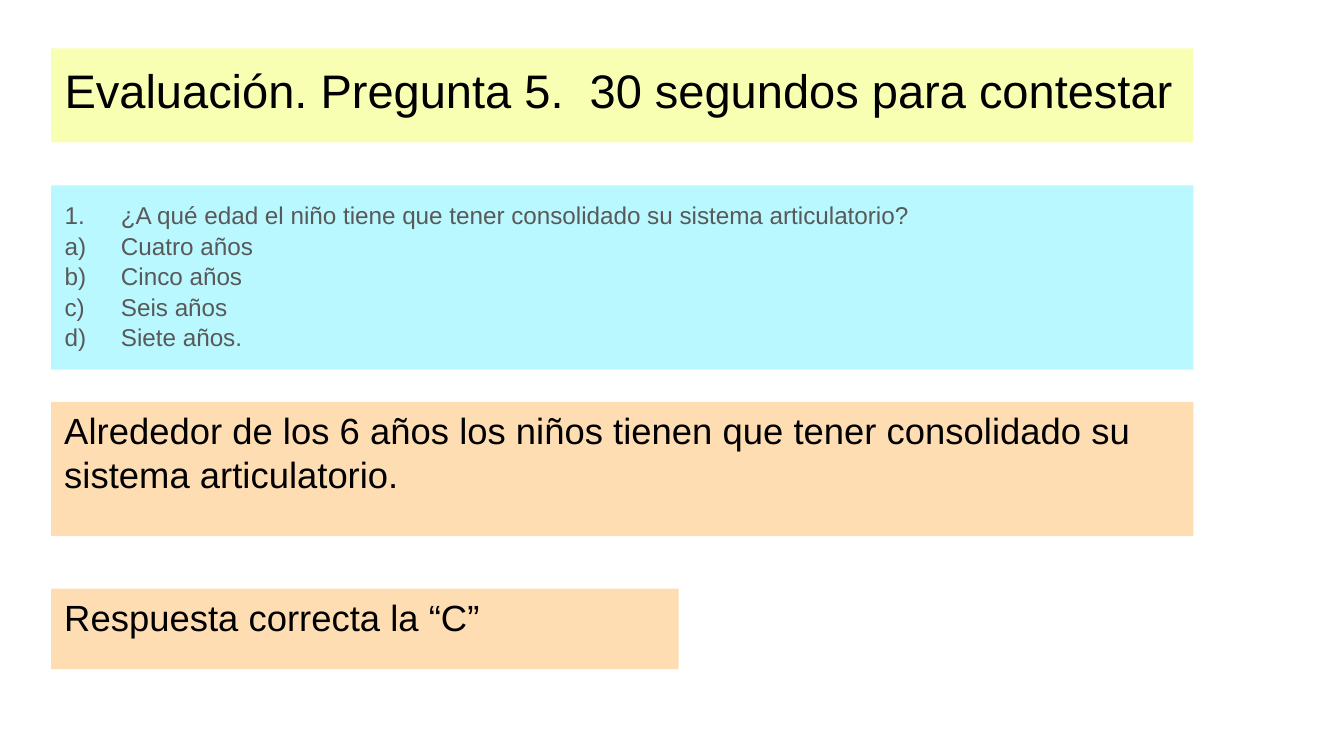
"""Build the quiz slide with its question, explanation and answer."""
import pptx
import pptx.util
import pptx.dml.color
import pptx.enum.text
import pptx.oxml.ns
import lxml.etree

TITLE = "Evaluación. Pregunta 5.  30 segundos para contestar"
QUESTION = "¿A qué edad el niño tiene que tener consolidado su sistema articulatorio?"
OPTIONS = ["Cuatro años", "Cinco años", "Seis años", "Siete años."]
EXPLANATION = "Alrededor de los 6 años los niños tienen que tener consolidado su sistema articulatorio."
ANSWER = "Respuesta correcta la “C”"

THEME = {
    "font": "Arial",
    "title": {"size": 25.2, "color": "000000", "fill": "F8FFB3", "spacing": 1.0},
    "question": {"size": 13, "color": "595959", "fill": "BAF8FF", "spacing": 1.05},
    "answer": {"size": 19.5, "color": "000000", "fill": "FFDDB3", "spacing": 1.0},
}
SLIDE_WIDTH = 10
LEFT, WIDTH, ANSWER_WIDTH = 0.38, 8.5, 4.67
INDENT = pptx.util.Inches(0.42)


def rgb(value):
    return pptx.dml.color.RGBColor.from_string(value)


def add_number(paragraph, scheme, color):
    properties = paragraph._p.get_or_add_pPr()
    properties.set("marL", str(INDENT))
    properties.set("indent", str(-INDENT))
    bullet_color = lxml.etree.SubElement(properties, pptx.oxml.ns.qn("a:buClr"))
    lxml.etree.SubElement(bullet_color, pptx.oxml.ns.qn("a:srgbClr"), val=color)
    lxml.etree.SubElement(properties, pptx.oxml.ns.qn("a:buAutoNum"), type=scheme)


def fill_panel(shape, box, style, lines, margin, schemes=()):
    shape.left, shape.top, shape.width, shape.height = map(pptx.util.Inches, box)
    shape.fill.solid()
    shape.fill.fore_color.rgb = rgb(style["fill"])
    frame = shape.text_frame
    frame.word_wrap = True
    frame.auto_size = pptx.enum.text.MSO_AUTO_SIZE.NONE
    frame.vertical_anchor = pptx.enum.text.MSO_ANCHOR.TOP
    frame.margin_left = frame.margin_right = pptx.util.Inches(0.1)
    frame.margin_top = frame.margin_bottom = pptx.util.Inches(margin)
    frame.text = "\n".join(lines)
    for paragraph in frame.paragraphs:
        paragraph.alignment = pptx.enum.text.PP_ALIGN.LEFT
        paragraph.line_spacing = style["spacing"]
        paragraph.space_before = pptx.util.Pt(0)
    for paragraph, scheme in zip(frame.paragraphs, schemes):
        add_number(paragraph, scheme, style["color"])
    for paragraph in frame.paragraphs:
        paragraph.font.name = THEME["font"]
        paragraph.font.size = pptx.util.Pt(style["size"])
        paragraph.font.color.rgb = rgb(style["color"])


def main():
    presentation = pptx.Presentation()
    presentation.slide_width = pptx.util.Inches(SLIDE_WIDTH)
    presentation.slide_height = pptx.util.Inches(SLIDE_WIDTH * 9 / 16)
    slide = presentation.slides.add_slide(presentation.slide_layouts[1])

    fill_panel(slide.shapes.title, (LEFT, 0.36, WIDTH, 0.7), THEME["title"], [TITLE], 0.1)
    schemes = ["arabicPeriod"] + ["alphaLcParenR"] * len(OPTIONS)
    fill_panel(slide.placeholders[1], (LEFT, 1.38, WIDTH, 1.37), THEME["question"],
               [QUESTION] + OPTIONS, 0.1, schemes)
    for text, top, width, height in [(ANSWER, 4.38, ANSWER_WIDTH, 0.6), (EXPLANATION, 2.99, WIDTH, 1)]:
        panel = slide.shapes.add_textbox(0, 0, 0, 0)
        fill_panel(panel, (LEFT, top, width, height), THEME["answer"], [text], 0.05)
    presentation.save("out.pptx")


if __name__ == "__main__":
    main()
